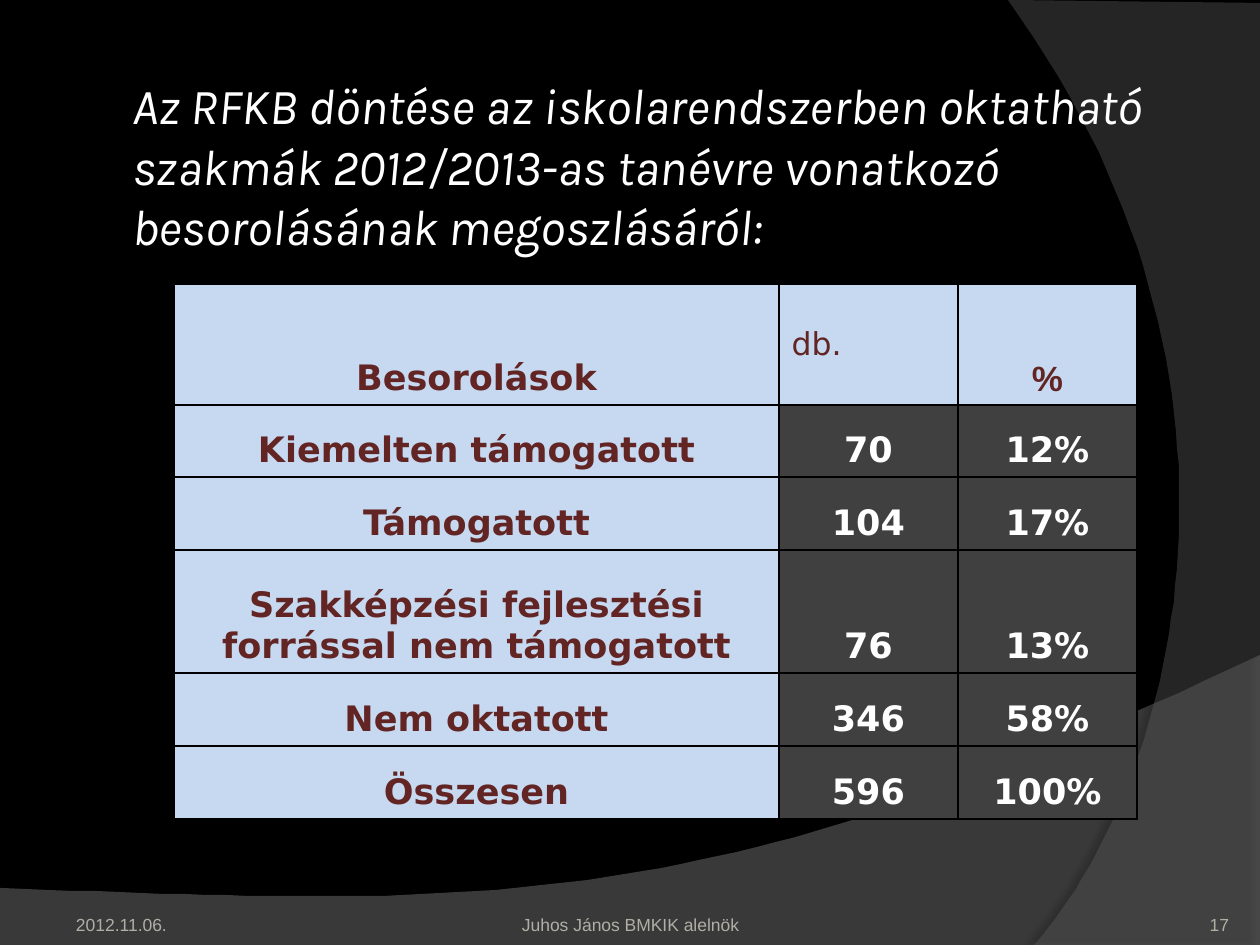
from dataclasses import dataclass

from lxml.etree import SubElement
from pptx import Presentation
from pptx.dml.color import RGBColor
from pptx.enum.text import MSO_ANCHOR as Anchor, MSO_AUTO_SIZE as AutoSize, PP_ALIGN as Align
from pptx.oxml.ns import qn
from pptx.util import Emu, Pt

EMU_PER_PX = 914400 / 126
CURVE_STEPS = 60

COLORS = {
    "background": "000000",
    "floor": "7F7F7F",
    "side": "5E5E5E",
    "footer": "B0AFA6",
    "white": "FFFFFF",
    "label": "632523",
    "label_fill": "C6D9F1",
    "value_fill": "404040",
    "black": "000000",
}

Point = tuple[int, int]


@dataclass
class Swoosh:
    """A translucent area: straight corners, then one cubic curve."""
    color: str
    alpha: int
    corners: list[Point]
    curve: list[Point]
    shadow_alpha: int
    shadow_distance: float
    shadow_angle: int


@dataclass
class Footer:
    text: str
    left: int
    width: int
    align: Align
    side_margin: int


SWOOSHES = [
    Swoosh("floor", 45, [(0, 888), (0, 946), (1260, 946), (1260, 655)],
           [(704, 919), (493, 906), (0, 888)], 35, 3.5, 270),
    Swoosh("side", 40, [(1260, 3), (1260, 945), (1034, 945)],
           [(1178, 780), (1283, 378), (1008, 0)], 45, 4, 180),
]

FOOTERS = [
    Footer("2012.11.06.", 63, 294, Align.LEFT, 13),
    Footer("Juhos János BMKIK alelnök", 431, 399, Align.CENTER, 0),
    Footer("17", 1124, 105, Align.RIGHT, 0),
]

TITLE = ("Az RFKB döntése az iskolarendszerben oktatható szakmák "
         "2012/2013-as tanévre vonatkozó besorolásának megoszlásáról:")

COLUMN_WIDTHS = [605, 179, 179]
ROW_HEIGHTS = [121, 72, 73, 123, 73, 73]
ROWS = [
    ("Besorolások", "db.", "%"),
    ("Kiemelten támogatott", "70", "12%"),
    ("Támogatott", "104", "17%"),
    ("Szakképzési fejlesztési forrással nem támogatott", "76", "13%"),
    ("Nem oktatott", "346", "58%"),
    ("Összesen", "596", "100%"),
]


def px(length: float) -> Emu:
    return Emu(round(length * EMU_PER_PX))


def rgb(name: str) -> RGBColor:
    return RGBColor.from_string(COLORS[name])


def set_all(target, values: dict) -> None:
    for name, value in values.items():
        setattr(target, name, value)


def write(frame, text: str, color: str, align: Align, font: dict) -> None:
    paragraph = frame.paragraphs[0]
    paragraph.alignment = align
    run = paragraph.add_run()
    run.text = text
    set_all(run.font, font)
    run.font.color.rgb = rgb(color)


def curve_points(start: Point, curve: list[Point]) -> list[tuple[float, float]]:
    """Sample the cubic Bezier curve that leaves start."""
    points = []
    for step in range(1, CURVE_STEPS + 1):
        t = step / CURVE_STEPS
        weights = ((1 - t) ** 3, 3 * t * (1 - t) ** 2, 3 * t ** 2 * (1 - t), t ** 3)
        points.append(tuple(sum(weight * point[axis] for weight, point
                                in zip(weights, [start, *curve]))
                            for axis in (0, 1)))
    return points


def add_alpha(color_element, percent: int) -> None:
    SubElement(color_element, qn("a:alpha"), val=str(percent * 1000))


def add_swoosh(slide, swoosh: Swoosh) -> None:
    builder = slide.shapes.build_freeform(*swoosh.corners[0], scale=EMU_PER_PX)
    outline = swoosh.corners[1:] + curve_points(swoosh.corners[-1], swoosh.curve)
    builder.add_line_segments(outline, close=True)
    shape = builder.convert_to_shape()
    shape.line.fill.background()
    shape.fill.solid()
    shape.fill.fore_color.rgb = rgb(swoosh.color)
    shape.shadow.inherit = False
    properties = shape.element.spPr
    add_alpha(properties.find(f"{qn('a:solidFill')}/{qn('a:srgbClr')}"), swoosh.alpha)
    shadow = SubElement(properties.find(qn("a:effectLst")), qn("a:outerShdw"),
                        blurRad=str(Pt(4)), dist=str(Pt(swoosh.shadow_distance)),
                        dir=str(swoosh.shadow_angle * 60000), rotWithShape="0")
    add_alpha(SubElement(shadow, qn("a:srgbClr"), val=COLORS["black"]),
              swoosh.shadow_alpha)
    # Keep the backdrop behind the title
    slide.shapes.title.element.addprevious(shape.element)


def add_footer(slide, footer: Footer) -> None:
    box = slide.shapes.add_textbox(px(footer.left), px(885), px(footer.width), px(50))
    set_all(box.text_frame, {
        "word_wrap": True, "vertical_anchor": Anchor.BOTTOM,
        "margin_left": px(footer.side_margin), "margin_right": px(footer.side_margin),
        "margin_top": px(6), "margin_bottom": 0,
    })
    write(box.text_frame, footer.text, "footer", footer.align,
          {"name": "Arial", "size": Pt(10)})


def format_title(title) -> None:
    set_all(title, {"left": px(126), "top": px(86), "width": px(1134), "height": px(158)})
    margins = {f"margin_{side}": px(6) for side in ("left", "right", "top", "bottom")}
    set_all(title.text_frame, {"word_wrap": True, "auto_size": AutoSize.NONE,
                               "vertical_anchor": Anchor.MIDDLE, **margins})
    write(title.text_frame, TITLE, "white", Align.LEFT,
          {"name": "Karla", "size": Pt(28.8), "italic": True})


def add_borders(cell) -> None:
    properties = cell._tc.get_or_add_tcPr()
    for side in ("lnL", "lnR", "lnT", "lnB"):
        line = SubElement(properties, qn(f"a:{side}"), w=str(Pt(1)))
        fill = SubElement(line, qn("a:solidFill"))
        SubElement(fill, qn("a:srgbClr"), val=COLORS["black"])


def fill_cell(cell, text: str, row: int, column: int) -> None:
    is_label = row == 0 or column == 0
    is_count_header = (row, column) == (0, 1)
    add_borders(cell)
    cell.fill.solid()
    cell.fill.fore_color.rgb = rgb("label_fill" if is_label else "value_fill")
    cell.vertical_anchor = Anchor.MIDDLE if is_count_header else Anchor.BOTTOM
    font = {
        "name": "Arial" if text == "%" else "DejaVu Sans",
        "size": Pt(18 if is_count_header else 20),
        "bold": not is_count_header,
    }
    write(cell.text_frame, text, "label" if is_label else "white",
          Align.LEFT if is_count_header else Align.CENTER, font)


def add_ratings_table(slide) -> None:
    table = slide.shapes.add_table(len(ROWS), len(COLUMN_WIDTHS), px(174), px(284),
                                   px(sum(COLUMN_WIDTHS)), px(sum(ROW_HEIGHTS))).table
    set_all(table, {"first_row": False, "horz_banding": False})
    for column, width in zip(table.columns, COLUMN_WIDTHS):
        column.width = px(width)
    for row, height in zip(table.rows, ROW_HEIGHTS):
        row.height = px(height)
    for row, texts in enumerate(ROWS):
        for column, text in enumerate(texts):
            fill_cell(table.cell(row, column), text, row, column)


def main() -> None:
    presentation = Presentation()
    set_all(presentation, {"slide_width": px(1260), "slide_height": px(945)})
    slide = presentation.slides.add_slide(presentation.slide_layouts[5])

    # Backdrop
    slide.background.fill.solid()
    slide.background.fill.fore_color.rgb = rgb("background")
    for swoosh in SWOOSHES:
        add_swoosh(slide, swoosh)

    # Content
    format_title(slide.shapes.title)
    for footer in FOOTERS:
        add_footer(slide, footer)
    add_ratings_table(slide)
    presentation.save("out.pptx")


if __name__ == "__main__":
    main()
